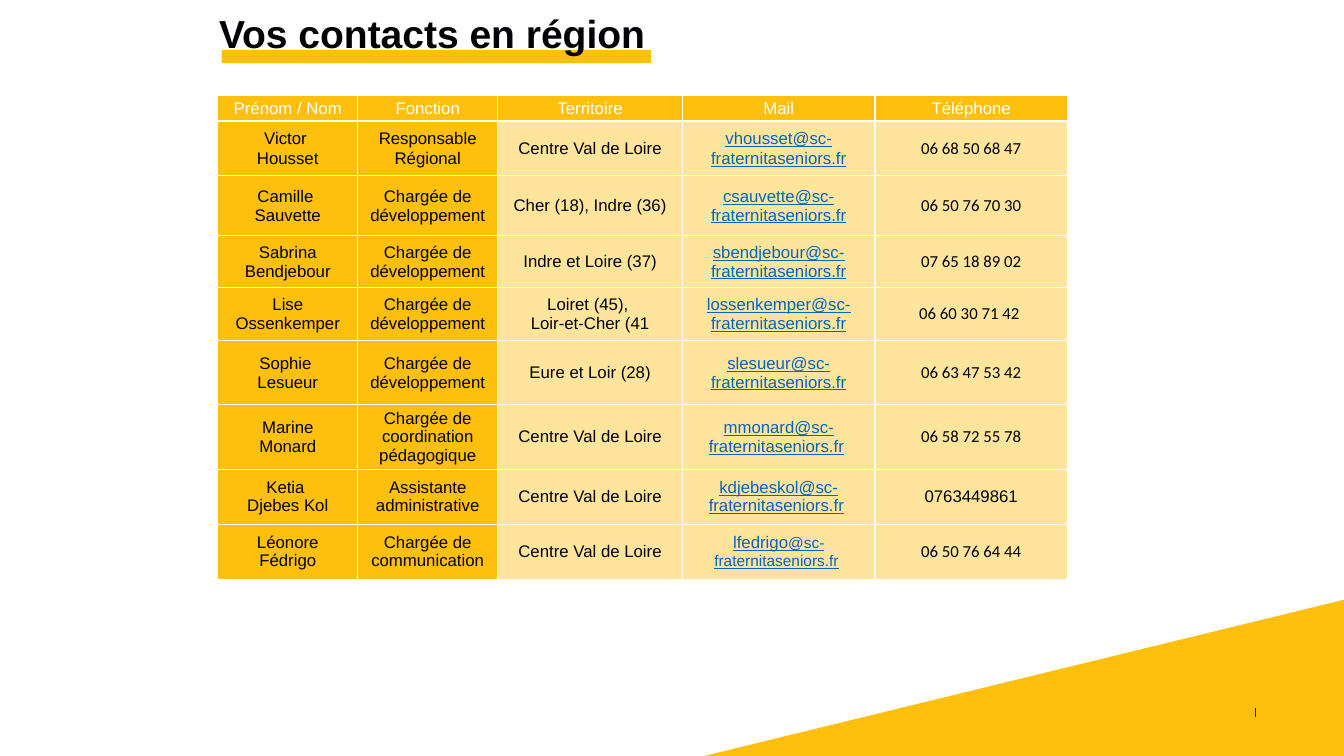
from lxml import etree
from pptx import Presentation
from pptx.dml.color import RGBColor
from pptx.enum.shapes import MSO_CONNECTOR, MSO_SHAPE
from pptx.enum.text import MSO_ANCHOR, PP_ALIGN
from pptx.oxml.ns import qn
from pptx.util import Pt

TITLE = "Vos contacts en région"
HEADERS = ["Prénom / Nom", "Fonction", "Territoire", "Mail", "Téléphone"]
# "\v" breaks a line, "\n" starts a paragraph
CONTACTS = [
    ("Victor \vHousset", "Responsable Régional", "Centre Val de Loire",
     "vhousset@sc-fraternitaseniors.fr", "06 68 50 68 47"),
    ("Camille \nSauvette", "Chargée de développement", "Cher (18), Indre (36)",
     "csauvette@sc-fraternitaseniors.fr", "06 50 76 70 30"),
    ("Sabrina Bendjebour", "Chargée de développement", "Indre et Loire (37)",
     "sbendjebour@sc-fraternitaseniors.fr", "07 65 18 89 02"),
    ("Lise Ossenkemper", "Chargée de développement", "Loiret (45), \vLoir-et-Cher (41",
     "lossenkemper@sc-fraternitaseniors.fr", "06 60 30 71 42 "),
    ("Sophie \nLesueur", "Chargée de développement", "Eure et Loir (28)",
     "slesueur@sc-fraternitaseniors.fr", "06 63 47 53 42"),
    ("Marine\nMonard", "Chargée de coordination pédagogique", "Centre Val de Loire",
     "mmonard@sc-fraternitaseniors.fr ", "06 58 72 55 78"),
    ("Ketia \vDjebes Kol", "Assistante administrative", "Centre Val de Loire",
     "kdjebeskol@sc-fraternitaseniors.fr ", "0763449861"),
    ("Léonore\nFédrigo", "Chargée de communication", "Centre Val de Loire",
     "lfedrigo@sc-fraternitaseniors.fr ", "06 50 76 64 44"),
]
COLUMN_WIDTHS = [100, 100, 132, 137.5, 137.5]
ROW_HEIGHTS = [18, 39, 43, 37, 38, 45.7, 45.7, 39.3, 39.3]
TABLE_LEFT, TABLE_TOP = 155.6, 68.3
MAIL_COLUMN, PHONE_COLUMN = 3, 4
WIDTH, HEIGHT = 960, 540

YELLOW, PALE, WHITE, BLACK, LINK = "FFBF0D", "FFE59B", "FFFFFF", "000000", "0563C1"


def rgb(color):
    return RGBColor.from_string(color)


def paint(shape, color):
    shape.shadow.inherit = False
    shape.fill.solid()
    shape.fill.fore_color.rgb = rgb(color)
    shape.line.fill.background()


def set_font(run, color, size=12, name="Arial"):
    run.font.name = name
    run.font.size = Pt(size)
    run.font.color.rgb = rgb(color)


def add_borders(cell, color, width):
    properties = cell._tc.get_or_add_tcPr()
    for side in ("lnL", "lnR", "lnT", "lnB"):
        line = etree.SubElement(properties, qn(f"a:{side}"), w=str(Pt(width)))
        fill = etree.SubElement(line, qn("a:solidFill"))
        etree.SubElement(fill, qn("a:srgbClr"), val=color)


def write_mail(paragraph, mail, domain_size):
    """Underline the address, leaving any trailing space plain."""
    address = mail.rstrip()
    user, domain = address.split("@")
    parts = [(user, 12), ("@" + domain, domain_size)] if domain_size != 12 else [(address, 12)]
    for text, size in parts:
        run = paragraph.add_run()
        run.text = text
        set_font(run, LINK, size)
        run.font.underline = True
    if mail != address:
        run = paragraph.add_run()
        run.text = " "
        set_font(run, BLACK, domain_size)


def fill_cell(cell, row, column, text):
    add_borders(cell, WHITE, 1)
    cell.fill.solid()
    cell.fill.fore_color.rgb = rgb(YELLOW if row == 0 or column < 2 else PALE)
    cell.vertical_anchor = MSO_ANCHOR.MIDDLE
    cell.margin_left = cell.margin_right = Pt(2.2 if row < 2 else 1.4)
    cell.margin_top = cell.margin_bottom = Pt(2.9 if row == 1 else 1.4)
    frame = cell.text_frame
    if row and column == MAIL_COLUMN:
        write_mail(frame.paragraphs[0], text, 11 if row == len(CONTACTS) else 12)
    else:
        frame.text = text
        calibri = row and column == PHONE_COLUMN and " " in text
        for paragraph in frame.paragraphs:
            for run in paragraph.runs:
                set_font(run, BLACK if row else WHITE, name="Calibri" if calibri else "Arial")
    for paragraph in frame.paragraphs:
        paragraph.alignment = PP_ALIGN.CENTER
        if row < 2:
            paragraph.line_spacing = 1.07


def add_corner(slide):
    builder = slide.shapes.build_freeform(Pt(WIDTH), Pt(428.4))
    builder.add_line_segments([(Pt(503), Pt(HEIGHT)), (Pt(WIDTH), Pt(HEIGHT))], close=True)
    paint(builder.convert_to_shape(), YELLOW)
    tick = slide.shapes.add_connector(
        MSO_CONNECTOR.STRAIGHT, Pt(896.5), Pt(505.4), Pt(896.5), Pt(512))
    tick.line.color.rgb = rgb("231F20")
    tick.line.width = Pt(0.5)
    etree.SubElement(tick._element.spPr, qn("a:effectLst"))


def add_title(slide):
    underline = slide.shapes.add_shape(
        MSO_SHAPE.RECTANGLE, Pt(158.4), Pt(35.7), Pt(306.7), Pt(9.4))
    paint(underline, YELLOW)
    box = slide.shapes.add_textbox(Pt(155.6), Pt(8), Pt(620), Pt(32.4))
    frame = box.text_frame
    frame.word_wrap = True
    frame.margin_left = frame.margin_right = frame.margin_top = frame.margin_bottom = 0
    frame.text = TITLE
    paragraph = frame.paragraphs[0]
    paragraph.line_spacing = Pt(31.9)
    paragraph._p.get_or_add_pPr().set("marL", str(Pt(0.9)))
    set_font(paragraph.runs[0], "000205", 27.9)
    paragraph.runs[0].font.bold = True


def add_contacts(slide):
    rows = [HEADERS, *CONTACTS]
    table = slide.shapes.add_table(
        len(rows), len(HEADERS), Pt(TABLE_LEFT), Pt(TABLE_TOP),
        Pt(sum(COLUMN_WIDTHS)), Pt(sum(ROW_HEIGHTS))).table
    table.first_row = table.horz_banding = False
    for column, width in zip(table.columns, COLUMN_WIDTHS):
        column.width = Pt(width)
    for row, height in zip(table.rows, ROW_HEIGHTS):
        row.height = Pt(height)
    for row, texts in enumerate(rows):
        for column, text in enumerate(texts):
            fill_cell(table.cell(row, column), row, column, text)


def main():
    presentation = Presentation()
    presentation.slide_width, presentation.slide_height = Pt(WIDTH), Pt(HEIGHT)
    slide = presentation.slides.add_slide(presentation.slide_layouts[6])
    add_corner(slide)
    add_title(slide)
    add_contacts(slide)
    presentation.save("out.pptx")


if __name__ == "__main__":
    main()
